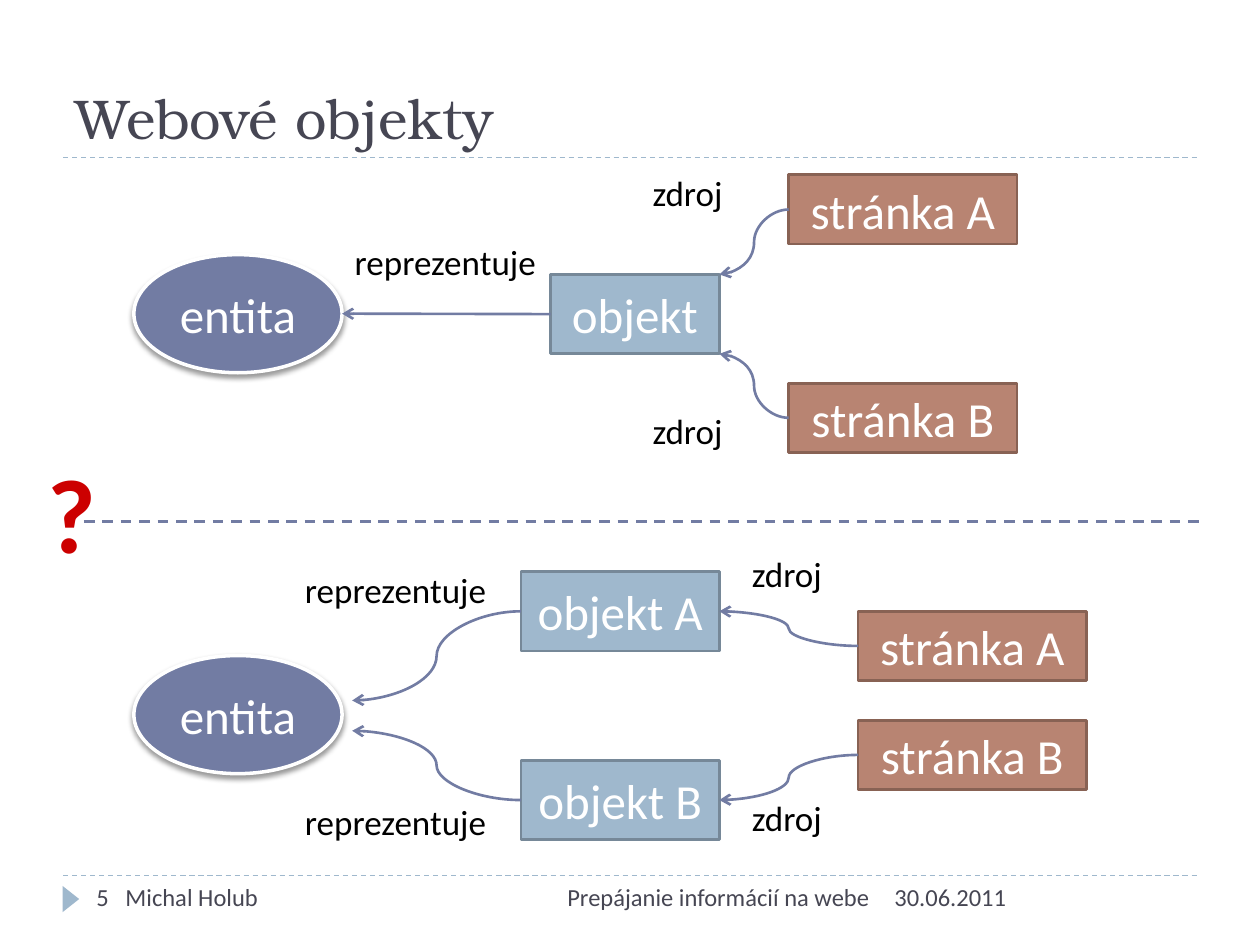
from lxml import etree
from pptx import Presentation
from pptx.dml.color import RGBColor
from pptx.enum.dml import MSO_LINE
from pptx.enum.shapes import MSO_CONNECTOR, MSO_SHAPE
from pptx.enum.text import MSO_ANCHOR, PP_ALIGN
from pptx.oxml.ns import qn
from pptx.util import Pt

STRAIGHT, CURVE = MSO_CONNECTOR.STRAIGHT, MSO_CONNECTOR.CURVE
RECTANGLE, OVAL, TRIANGLE = MSO_SHAPE.RECTANGLE, MSO_SHAPE.OVAL, MSO_SHAPE.ISOSCELES_TRIANGLE
DASH = MSO_LINE.DASH
LEFT, CENTER, RIGHT = PP_ALIGN.LEFT, PP_ALIGN.CENTER, PP_ALIGN.RIGHT
TOP, MIDDLE, BOTTOM = MSO_ANCHOR.TOP, MSO_ANCHOR.MIDDLE, MSO_ANCHOR.BOTTOM
LEFT_SIDE, RIGHT_SIDE = 1, 3

INDIGO, SKY, INK = "727CA3", "9FB8CD", "464653"
STYLES = {  # preset, fill, line colour, line width, height
    "entity": (OVAL, INDIGO, "FFFFFF", 2, 67.5),
    "object": (RECTANGLE, SKY, "768898", 1.5, 45.4),
    "page": (RECTANGLE, "B88472", "886254", 1.5, 39.6),
}
NODES = {  # style, text, left, top, width
    "entity 1": ("entity", "entita", 76.5, 145.5, 119),
    "object": ("object", "objekt", 314.6, 156.8, 96.5),
    "page A 1": ("page", "stránka A", 450.7, 99.9, 130.4),
    "page B 1": ("page", "stránka B", 450.7, 219, 130.4),
    "entity 2": ("entity", "entita", 76.5, 374.6, 119),
    "object A": ("object", "objekt A", 297.7, 326.6, 113.4),
    "object B": ("object", "objekt B", 297.7, 434.5, 113.4),
    "page A 2": ("page", "stránka A", 490.4, 349.3, 130.4),
    "page B 2": ("page", "stránka B", 490.4, 411.6, 130.4),
}
ARROWS = [  # kind, source node, target node or point
    (CURVE, "page A 1", (411.1, 156.8)),
    (CURVE, "page B 1", (411.1, 202.2)),
    (STRAIGHT, "object", (195.5, 179.25)),
    (CURVE, "page A 2", "object A"),
    (CURVE, "page B 2", "object B"),
    (CURVE, "object A", (201.3, 400.3)),
    (CURVE, "object B", (201.3, 417.6)),
]
LABELS = {  # text: width and places
    "reprezentuje": (118, [(195.6, 134), (167.2, 321.2), (167.2, 453.9)]),
    "zdroj": (56, [(365.8, 94.4), (365.8, 230.4), (422.6, 312.4), (422.6, 451.6)]),
}
FOOTERS = [  # text, left, width, alignment
    ("30.06.2011", 504, 180, LEFT),
    ("Prepájanie informácií na webe", 228, 276, RIGHT),
    ("5\tMichal Holub", 48, 156, LEFT),
]
RULES = [  # left, right, y, colour, width
    (36, 684, 500.4, SKY, 0.75),
    (36, 684, 90, SKY, 0.75),
    (48, 689, 298, INDIGO, 1.5),
]


def color(value):
    return RGBColor.from_string(value)


def write(shape, text, size, ink, align=LEFT, anchor=TOP, wrap=True, font="Calibri", bold=False):
    frame = shape.text_frame
    frame.word_wrap, frame.vertical_anchor = wrap, anchor
    paragraph = frame.paragraphs[0]
    paragraph.alignment = align
    run = paragraph.add_run()
    run.text = text
    for name, value in {"name": font, "size": Pt(size), "bold": bold}.items():
        setattr(run.font, name, value)
    run.font.color.rgb = color(ink)
    return paragraph


def add_text(slide, box, *args, **options):
    return write(slide.shapes.add_textbox(*map(Pt, box)), *args, **options)


def add_line(slide, kind, points, ink, width):
    line = slide.shapes.add_connector(kind, *map(Pt, points))
    line.line.color.rgb, line.line.width = color(ink), Pt(width)
    etree.SubElement(line._element.spPr, qn("a:effectLst"))
    return line


def add_soft_shadow(shape):
    effects = shape._element.spPr.find(qn("a:effectLst"))
    shadow = etree.SubElement(effects, qn("a:outerShdw"), blurRad=str(Pt(3)),
                              dist=str(Pt(2)), dir="5400000", rotWithShape="0")
    black = etree.SubElement(shadow, qn("a:srgbClr"), val="000000")
    etree.SubElement(black, qn("a:alpha"), val="40000")


def add_node(slide, style, text, left, top, width):
    preset, fill, ink, line_width, height = STYLES[style]
    shape = slide.shapes.add_shape(preset, *map(Pt, (left, top, width, height)))
    shape.fill.solid()
    shape.fill.fore_color.rgb = color(fill)
    shape.line.color.rgb, shape.line.width = color(ink), Pt(line_width)
    shape.shadow.inherit = False
    if style == "entity":
        add_soft_shadow(shape)
    write(shape, text, 28, "FFFFFF", CENTER, MIDDLE)
    return shape


def add_arrow(slide, nodes, kind, source, target):
    joined = isinstance(target, str)
    end = (0, 0) if joined else target
    arrow = add_line(slide, kind, (0, 0, *end), INDIGO, 1.5)
    arrow.begin_connect(nodes[source], LEFT_SIDE)
    if joined:
        arrow.end_connect(nodes[target], RIGHT_SIDE)
    etree.SubElement(arrow.line._get_or_add_ln(), qn("a:tailEnd"), type="arrow")


def main():
    presentation = Presentation()
    presentation.slide_width, presentation.slide_height = Pt(720), Pt(540)
    slide = presentation.slides.add_slide(presentation.slide_layouts[5])

    title = slide.shapes.title
    title.left, title.top, title.width, title.height = map(Pt, (36, 12, 648, 78))
    write(title, "Webové objekty", 32, INK, anchor=BOTTOM, font="TeX Gyre Bonum")

    for left, right, y, ink, width in RULES:
        add_line(slide, STRAIGHT, (left, y, right, y), ink, width).line.dash_style = DASH

    marker = slide.shapes.add_shape(TRIANGLE, *map(Pt, (33, 509, 15, 9.5)))
    marker.rotation = 90
    marker.fill.solid()
    marker.fill.fore_color.rgb = color(SKY)
    marker.line.fill.background()
    marker.shadow.inherit = False

    for text, left, width, align in FOOTERS:
        paragraph = add_text(slide, (left, 500.4, width, 28.8), text, 14, INK, align)
        if "\t" in text:
            stops = etree.SubElement(paragraph._p.get_or_add_pPr(), qn("a:tabLst"))
            etree.SubElement(stops, qn("a:tab"), pos=str(Pt(16.6)), algn="l")

    nodes = {name: add_node(slide, *node) for name, node in NODES.items()}
    for arrow in ARROWS:
        add_arrow(slide, nodes, *arrow)

    for text, (width, places) in LABELS.items():
        for left, top in places:
            add_text(slide, (left, top, width, 31.5), text, 20, "000000", wrap=False)
    add_text(slide, (20, 252.7, 39.6, 80), "?", 60, "CC0000", bold=True)

    presentation.save("out.pptx")


if __name__ == "__main__":
    main()
